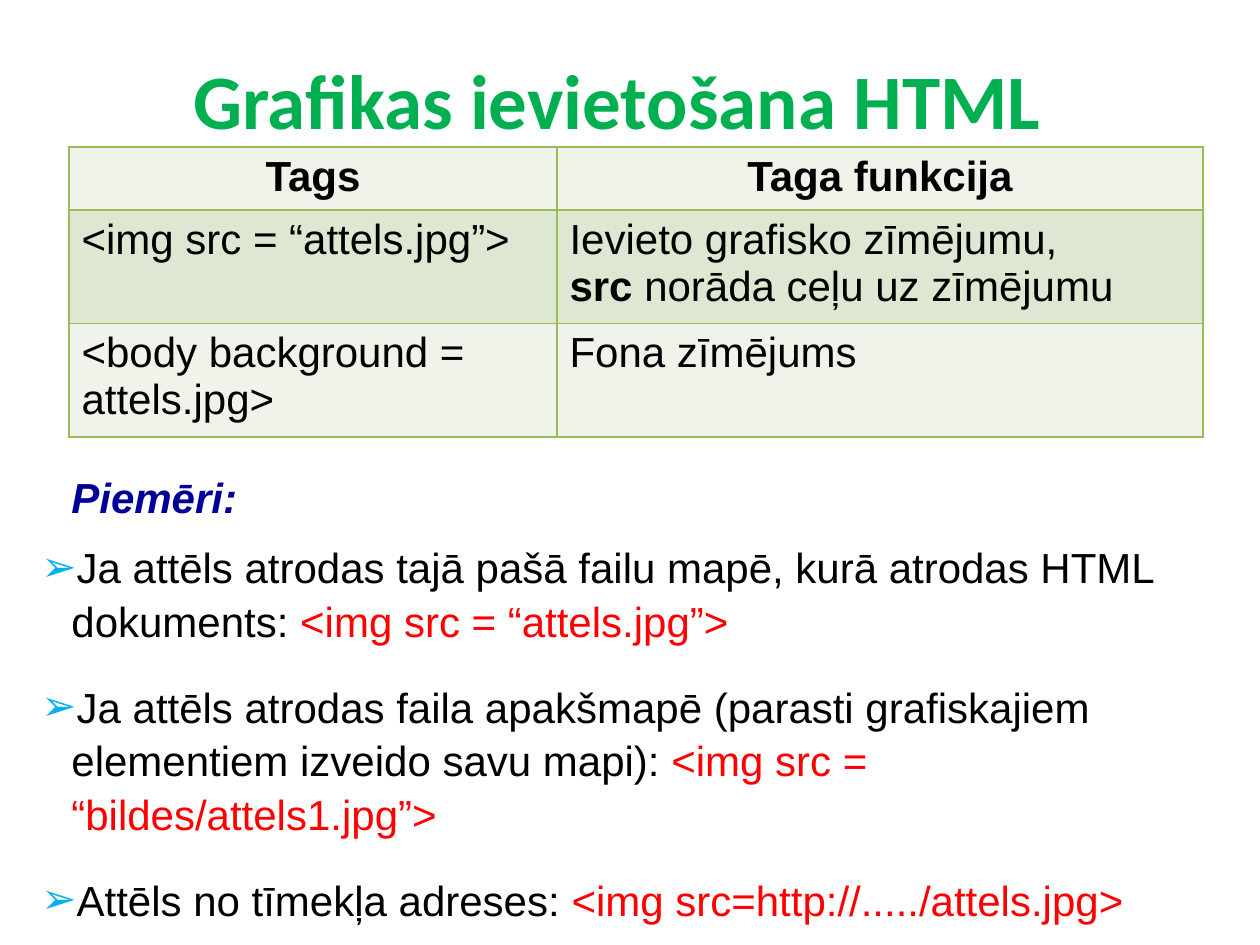
from dataclasses import dataclass
from typing import NamedTuple

from lxml import etree
from pptx import Presentation
from pptx import util as u
from pptx.dml.color import RGBColor
from pptx.enum import text
from pptx.oxml import ns

PX = 914400 / 126

BLACK = RGBColor(0x00, 0x00, 0x00)
GREEN = RGBColor(0x00, 0xB0, 0x50)
NAVY = RGBColor(0x00, 0x00, 0x99)
RED = RGBColor(0xFF, 0x00, 0x00)
SKY = RGBColor(0x00, 0xB0, 0xF0)
PALE = RGBColor(0xEF, 0xF3, 0xEA)
SAGE = RGBColor(0xDE, 0xE7, 0xD1)
OLIVE = RGBColor(0x9B, 0xBB, 0x59)


class Span(NamedTuple):
    words: str
    color: RGBColor = BLACK
    bold: bool = False


class Box(NamedTuple):
    left: int
    top: int
    width: int
    height: int


@dataclass(frozen=True)
class TagRow:
    tag: list[list[Span]]
    purpose: list[list[Span]]
    height: int
    fill: RGBColor
    align: text.PP_ALIGN = text.PP_ALIGN.LEFT


TAG_ROWS = [
    TagRow([[Span("Tags", bold=True)]], [[Span("Taga funkcija", bold=True)]],
           59, PALE, text.PP_ALIGN.CENTER),
    TagRow([[Span("<img src = “attels.jpg”>")]],
           [[Span("Ievieto grafisko zīmējumu,")],
            [Span("src", bold=True), Span(" norāda ceļu uz zīmējumu")]],
           106, SAGE),
    TagRow([[Span("<body background = attels.jpg>")]],
           [[Span("Fona zīmējums")]], 106, PALE),
]

EXAMPLES = [
    [Span("Ja attēls atrodas tajā pašā failu mapē, kurā atrodas HTML dokuments: "),
     Span("<img src = “attels.jpg”>", RED)],
    [Span("Ja attēls atrodas faila apakšmapē (parasti grafiskajiem elementiem "
          "izveido savu mapi): "),
     Span("<img src = “bildes/attels1.jpg”>", RED)],
    [Span("Attēls no tīmekļa adreses: "),
     Span("<img src=http://...../attels.jpg>", RED)],
]


def px(length: int) -> u.Emu:
    return u.Emu(round(length * PX))


def add_solid(parent, color: RGBColor) -> None:
    fill = etree.SubElement(parent, ns.qn("a:solidFill"))
    etree.SubElement(fill, ns.qn("a:srgbClr"), val=str(color))


def add_bullet(paragraph, indent: int) -> None:
    props = paragraph._p.get_or_add_pPr()
    props.set("marL", str(px(indent)))
    props.set("indent", str(-px(indent)))
    color = etree.SubElement(props, ns.qn("a:buClr"))
    etree.SubElement(color, ns.qn("a:srgbClr"), val=str(SKY))
    etree.SubElement(props, ns.qn("a:buFont"), typeface="Arial")
    etree.SubElement(props, ns.qn("a:buChar"), char="➢")


def write(frame, paragraphs: list[list[Span]], *, size: int = 24,
          font: str = "Arial", italic: bool = False,
          align: text.PP_ALIGN = text.PP_ALIGN.LEFT, before: int = 0,
          spacing: float = 1.0, bullet_indent: int = 0) -> None:
    for index, spans in enumerate(paragraphs):
        paragraph = frame.add_paragraph() if index else frame.paragraphs[0]
        paragraph.alignment = align
        paragraph.space_before = u.Pt(before)
        paragraph.line_spacing = spacing
        if bullet_indent:
            add_bullet(paragraph, bullet_indent)
        for span in spans:
            run = paragraph.add_run()
            run.text = span.words
            run.font.size = u.Pt(size)
            run.font.name = font
            run.font.bold = span.bold
            run.font.italic = italic
            run.font.color.rgb = span.color


def add_frame(slide, box: Box, anchor=text.MSO_ANCHOR.TOP):
    frame = slide.shapes.add_textbox(*map(px, box)).text_frame
    frame.word_wrap = True
    frame.vertical_anchor = anchor
    return frame


def outline(cell) -> None:
    props = cell._tc.get_or_add_tcPr()
    for index, side in enumerate(("a:lnL", "a:lnR", "a:lnT", "a:lnB")):
        line = etree.Element(ns.qn(side), w=str(u.Pt(1)))
        add_solid(line, OLIVE)
        props.insert(index, line)


def add_tag_table(slide, left: int, top: int, widths: list[int],
                  rows: list[TagRow]) -> None:
    box = Box(left, top, sum(widths), sum(row.height for row in rows))
    table = slide.shapes.add_table(len(rows), len(widths), *map(px, box)).table
    table.first_row = table.horz_banding = False
    for column, width in zip(table.columns, widths):
        column.width = px(width)
    for line, row in zip(table.rows, rows):
        line.height = px(row.height)
        for cell, content in zip(line.cells, (row.tag, row.purpose)):
            cell.fill.solid()
            cell.fill.fore_color.rgb = row.fill
            outline(cell)
            write(cell.text_frame, content, align=row.align)


def main() -> None:
    deck = Presentation()
    deck.slide_width, deck.slide_height = px(1260), px(945)
    slide = deck.slides.add_slide(deck.slide_layouts[6])

    title = add_frame(slide, Box(59, 20, 1134, 158), text.MSO_ANCHOR.MIDDLE)
    write(title, [[Span("Grafikas ievietošana HTML ", GREEN, True)]],
          size=44, font="Calibri", align=text.PP_ALIGN.CENTER)

    add_tag_table(slide, 69, 147, [488, 646], TAG_ROWS)

    heading = add_frame(slide, Box(59, 462, 246, 64))
    write(heading, [[Span("Piemēri:", NAVY, True)]], italic=True, spacing=1.07)

    examples = add_frame(slide, Box(29, 532, 1201, 330))
    write(examples, EXAMPLES, before=18, spacing=1.07, bullet_indent=30)

    deck.save("out.pptx")


if __name__ == "__main__":
    main()
